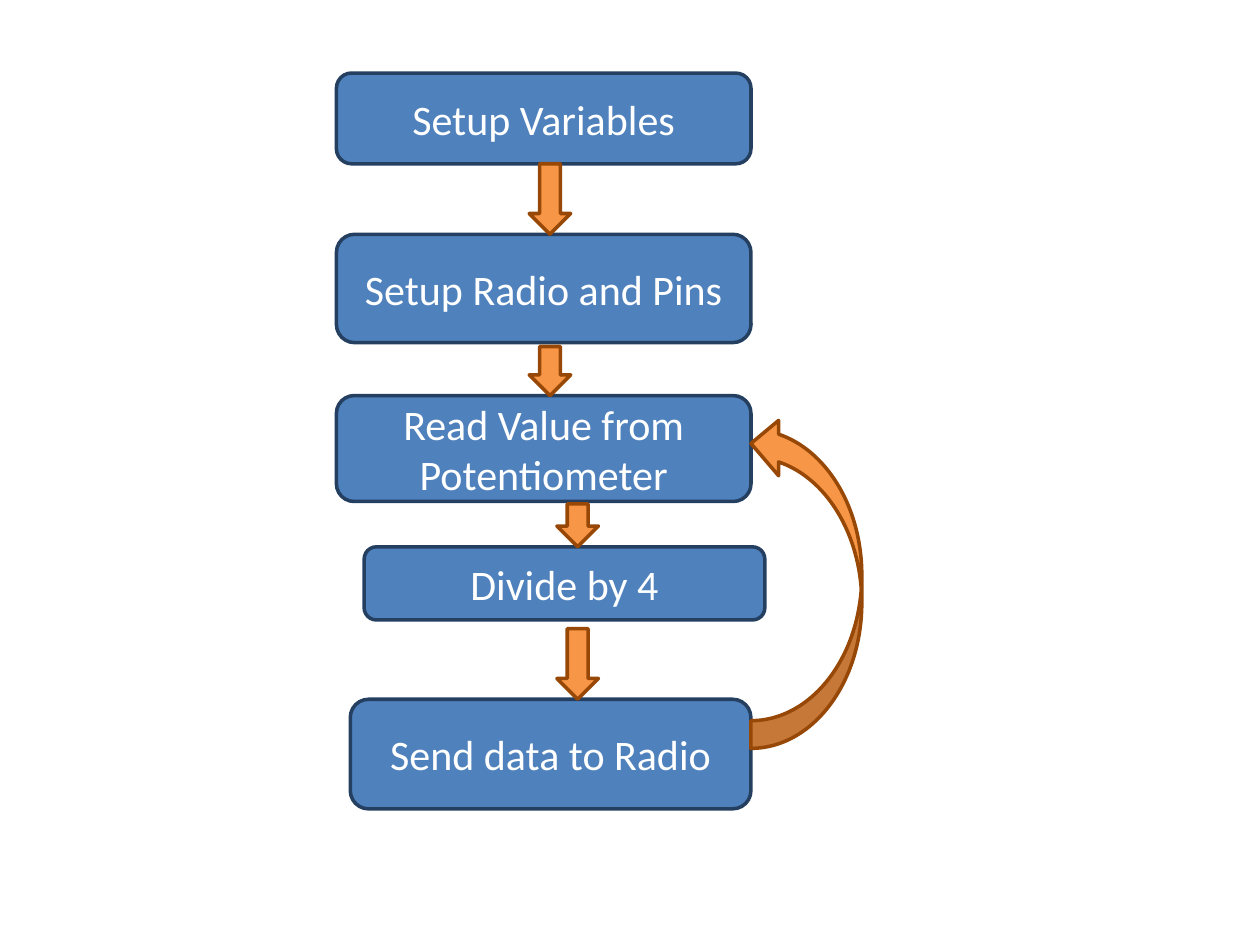
from dataclasses import dataclass

from pptx import Presentation
from pptx.dml.color import RGBColor
from pptx.enum.shapes import MSO_SHAPE as Shape
from pptx.enum.text import MSO_ANCHOR as Anchor, PP_ALIGN as Align
from pptx.util import Inches, Pt


@dataclass(frozen=True)
class Theme:
    box_fill: str = "4F81BD"
    box_line: str = "243F60"
    arrow_fill: str = "F79646"
    arrow_line: str = "974706"
    text: str = "FFFFFF"
    font: str = "Calibri"
    size: int = 24
    spacing: int = 5
    line_width: int = 2


class FlowChart:
    """Holds the theme and the group on the current slide."""

    def __init__(self, slide, theme):
        self.theme = theme
        self.group = slide.shapes.add_group_shape()

    def shape(self, kind, box, fill, line):
        sp = self.group.shapes.add_shape(kind, *map(Inches, box))
        sp.shadow.inherit = False
        sp.fill.solid()
        sp.fill.fore_color.rgb = RGBColor.from_string(fill)
        sp.line.color.rgb = RGBColor.from_string(line)
        sp.line.width = Pt(self.theme.line_width)
        return sp

    def step(self, text, *box):
        t = self.theme
        sp = self.shape(Shape.ROUNDED_RECTANGLE, box, t.box_fill, t.box_line)
        tf = sp.text_frame
        tf.word_wrap = True
        tf.vertical_anchor = Anchor.MIDDLE
        p = tf.paragraphs[0]
        p.alignment = Align.CENTER
        p.space_before = p.space_after = Pt(t.spacing)
        r = p.add_run()
        r.text = text
        r.font.name = t.font
        r.font.size = Pt(t.size)
        r.font.color.rgb = RGBColor.from_string(t.text)

    def arrow(self, kind, *box):
        t = self.theme
        return self.shape(kind, box, t.arrow_fill, t.arrow_line)

    def down_arrow(self, left, top, bottom):
        self.arrow(Shape.DOWN_ARROW, left, top, 0.33, bottom - top)

    def loop_arrow(self, *box):
        sp = self.arrow(Shape.CURVED_LEFT_ARROW, *box)
        sp.adjustments[0], sp.adjustments[1], sp.adjustments[2] = 0.25, 0.5, 0.25
        # Flipped so that the head points at the upper step
        sp._element.spPr.xfrm.set("flipV", "1")


def main():
    prs = Presentation()
    prs.slide_width, prs.slide_height = Inches(10), Inches(7.5)
    s = prs.slides.add_slide(prs.slide_layouts[6])
    chart = FlowChart(s, Theme())

    # Steps: text, left, top, width, height
    for step in (
        ("Setup Variables", 2.67, 0.58, 3.29, 0.72),
        ("Setup Radio and Pins", 2.67, 1.86, 3.29, 0.86),
        ("Read Value from Potentiometer", 2.67, 3.14, 3.29, 0.84),
        ("Divide by 4", 2.89, 4.34, 3.18, 0.58),
        ("Send data to Radio", 2.78, 5.55, 3.18, 0.87),
    ):
        chart.step(*step)

    # Loop back from sending to reading
    chart.loop_arrow(5.96, 3.3, 0.88, 2.64)

    # Arrows between steps: left, top, bottom
    for arrow in (
        (4.2, 1.3, 1.86),
        (4.2, 2.75, 3.14),
        (4.42, 4, 4.34),
        (4.42, 4.99, 5.55),
    ):
        chart.down_arrow(*arrow)

    prs.save("out.pptx")


if __name__ == "__main__":
    main()
